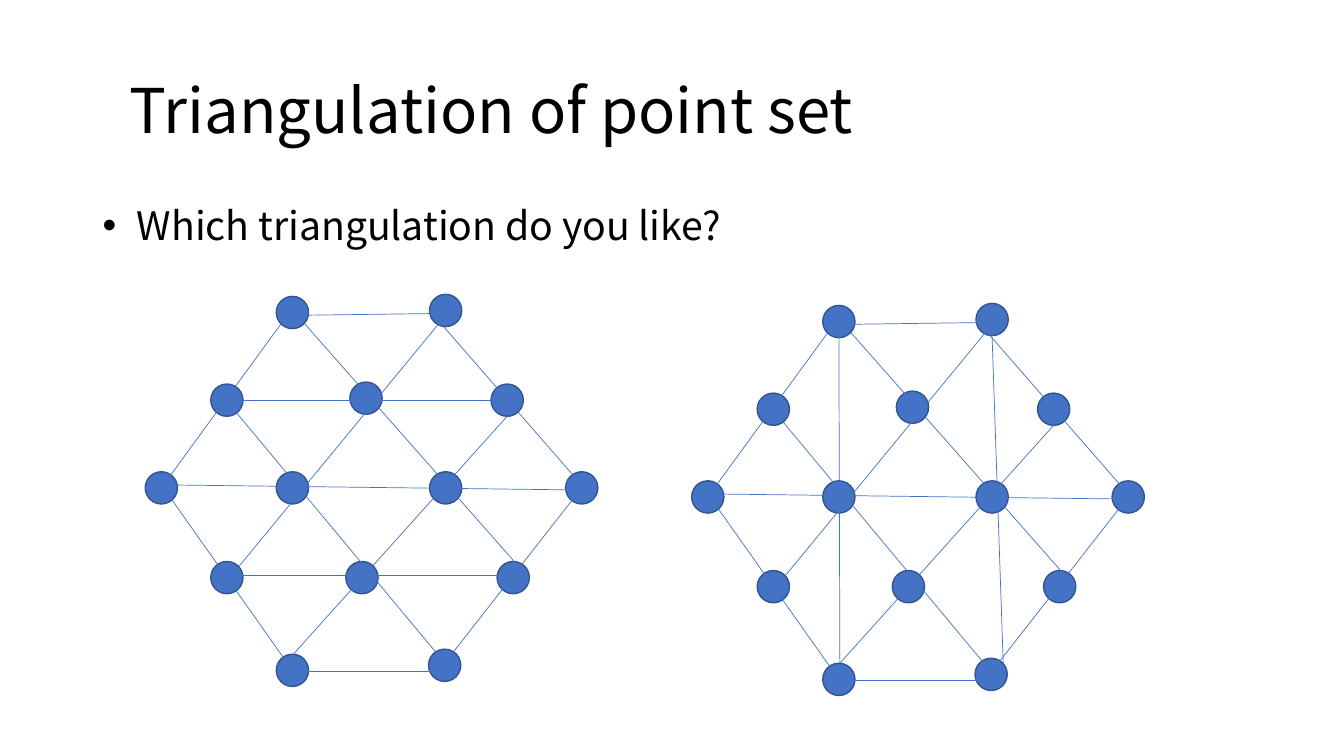
from lxml.etree import SubElement
from pptx import Presentation
from pptx.dml.color import RGBColor
from pptx.enum.shapes import MSO_CONNECTOR as CONN, MSO_SHAPE as SHAPE
from pptx.enum.text import MSO_ANCHOR as ANCHOR
from pptx.oxml.ns import qn
from pptx.util import Inches, Pt

FONT = "Noto Sans CJK JP"
DOT = 0.32

# Left and top of each point of the left-hand set
POINTS = [
    (2.74, 2.94), (4.26, 2.92),
    (2.09, 3.81), (3.47, 3.79), (4.87, 3.81),
    (1.44, 4.68), (2.74, 4.68), (4.26, 4.68), (5.61, 4.68),
    (2.09, 5.57), (3.43, 5.57), (4.93, 5.57),
    (2.74, 6.49), (4.25, 6.44),
]

# Edges that both triangulations share: x1, y1, x2, y2
SHARED_EDGES = [
    (2.79, 3.21, 1.6, 4.84), (1.6, 4.81, 2.9, 6.65),
    (4.26, 3.08, 5.89, 4.95), (5.77, 4.84, 4.3, 6.72),
    (2.83, 3.13, 4.34, 3.11), (2.94, 6.66, 4.33, 6.66),
    (4.46, 3.08, 2.37, 5.62), (5.03, 4.13, 2.91, 6.49),
    (3.02, 3.21, 5.25, 5.74), (2.25, 3.98, 4.53, 6.72),
    (1.6, 4.81, 5.66, 4.86),
]
HORIZONTAL_EDGES = [(2.42, 3.97, 4.87, 3.97), (2.37, 5.71, 4.98, 5.71)]
VERTICAL_EDGES = [(2.9, 3.11, 2.91, 6.49), (4.42, 3.25, 4.53, 6.49)]


def color(hex_string):
    return RGBColor.from_string(hex_string)


def add_text(slide, text, top, height, size, anchor, margin, bullet=None):
    box = slide.shapes.add_textbox(Inches(0.92), Inches(top), Inches(11.5), Inches(height))
    tf = box.text_frame
    tf.word_wrap = True
    tf.vertical_anchor = anchor
    p = tf.paragraphs[0]
    p.line_spacing = 0.9
    r = p.add_run()
    r.text = text
    r.font.size = Pt(size)
    r.font.name = FONT
    r.font.color.rgb = color("000000")
    pPr = p._p.get_or_add_pPr()
    pPr.set("marL", str(Inches(margin)))
    if bullet:
        p.space_before = Pt(10)
        pPr.set("indent", str(-Inches(margin)))
        SubElement(pPr, qn("a:buFont")).set("typeface", "Arial")
        SubElement(pPr, qn("a:buChar")).set("char", bullet)


def add_dot(group, x, y):
    sp = group.shapes.add_shape(SHAPE.OVAL, Inches(x), Inches(y), Inches(DOT), Inches(DOT))
    sp.shadow.inherit = False
    sp.fill.solid()
    sp.fill.fore_color.rgb = color("4472C4")
    sp.line.color.rgb = color("325491")
    sp.line.width = Pt(1)


def add_edge(group, x1, y1, x2, y2):
    edge = group.shapes.add_connector(
        CONN.STRAIGHT, Inches(x1), Inches(y1), Inches(x2), Inches(y2))
    edge.line.color.rgb = color("4472C4")
    edge.line.width = Pt(0.5)
    SubElement(edge._element.spPr, qn("a:effectLst"))


def add_triangulation(slide, edges, dx=0, dy=0):
    group = slide.shapes.add_group_shape()
    for x, y in POINTS:
        add_dot(group, x + dx, y + dy)
    for x1, y1, x2, y2 in edges:
        add_edge(group, x1 + dx, y1 + dy, x2 + dx, y2 + dy)


def main():
    prs = Presentation()
    prs.slide_width, prs.slide_height = Inches(13.33), Inches(7.5)
    slide = prs.slides.add_slide(prs.slide_layouts[6])

    # Title and question
    add_text(slide, "Triangulation of point set", 0.4, 1.45, 44, ANCHOR.MIDDLE, 0.27)
    add_text(slide, "Which triangulation do you like?", 2, 4.76, 28, ANCHOR.TOP, 0.34, "•")

    # The same points, triangulated in two ways
    add_triangulation(slide, SHARED_EDGES + VERTICAL_EDGES, 5.42, 0.09)
    add_triangulation(slide, SHARED_EDGES + HORIZONTAL_EDGES)

    prs.save("out.pptx")


if __name__ == "__main__":
    main()
